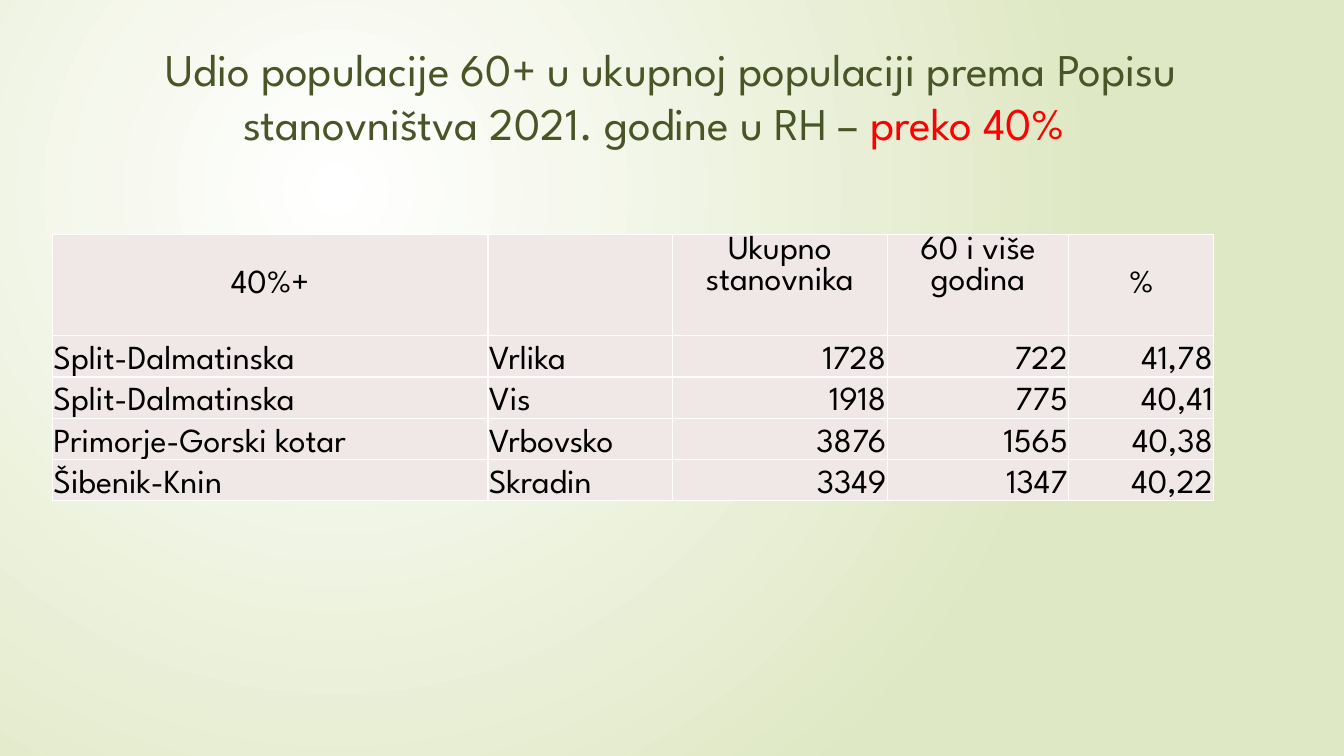
from lxml.etree import SubElement
from pptx import Presentation
from pptx.dml.color import RGBColor
from pptx.enum.text import MSO_ANCHOR, PP_ALIGN
from pptx.oxml.ns import qn
from pptx.util import Inches, Pt

FONT = "League Spartan"
HUES = {"white": "FFFFFF", "lime": "DFE8C4", "olive": "495526",
        "red": "FF0000", "black": "000000", "blush": "F0E8E7"}
LEFT = 0.52
COLS = [4.32, 1.83, 2.13, 1.8, 1.44]
HEAD_H, ROW_H = 1.0, 0.41
DATA = [
    ["40%+", "", "Ukupno stanovnika", "60 i više godina", "%"],
    ["Split-Dalmatinska", "Vrlika", "1728", "722", "41,78"],
    ["Split-Dalmatinska", "Vis", "1918", "775", "40,41"],
    ["Primorje-Gorski kotar", "Vrbovsko", "3876", "1565", "40,38"],
    ["Šibenik-Knin", "Skradin", "3349", "1347", "40,22"],
]


def color(name):
    return RGBColor.from_string(HUES[name])


def style(run, size, hue):
    run.font.name = FONT
    run.font.size = Pt(size)
    run.font.color.rgb = color(hue)


def paint_back(slide):
    """Fill the background with a radial gradient centred up and left."""
    fill = slide.background.fill
    fill.gradient()
    for stop, hue, pos in zip(fill.gradient_stops, ("white", "lime"), (0, 1)):
        stop.color.rgb = color(hue)
        stop.position = pos
    grad = slide.element.find(".//" + qn("a:gradFill"))
    grad.remove(grad.find(qn("a:lin")))
    ring = SubElement(grad, qn("a:path"), {"path": "circle"})
    SubElement(ring, qn("a:fillToRect"),
               {"l": "50000", "t": "50000", "r": "100000", "b": "100000"})


def add_title(slide, parts):
    box = slide.shapes.add_textbox(Inches(LEFT), Inches(0.34),
                                   Inches(12.28), Inches(1.4))
    frame = box.text_frame
    frame.word_wrap = True
    frame.margin_top = Inches(0.07)
    para = frame.paragraphs[0]
    para.alignment = PP_ALIGN.CENTER
    para.line_spacing = Pt(38.6)
    for text, hue in parts:
        run = para.add_run()
        run.text = text
        style(run, 32.4, hue)


def add_edges(cell):
    """Draw a thin white line on each side of the cell."""
    props = cell._tc.get_or_add_tcPr()
    for spot, side in enumerate(("a:lnL", "a:lnR", "a:lnT", "a:lnB")):
        line = props.makeelement(qn(side), {"w": str(Pt(1))})
        fill = SubElement(line, qn("a:solidFill"))
        SubElement(fill, qn("a:srgbClr"), {"val": HUES["white"]})
        props.insert(spot, line)


def fill_cell(cell, text, row, col):
    head = row == 0
    cell.fill.solid()
    cell.fill.fore_color.rgb = color("blush")
    add_edges(cell)
    cell.margin_left = cell.margin_right = cell.margin_top = Inches(0.01)
    # The two-line headings sit at the top of the tall row.
    cell.margin_bottom = Inches(0.37 if head and " " in text else 0)
    cell.vertical_anchor = MSO_ANCHOR.MIDDLE if head else MSO_ANCHOR.BOTTOM
    para = cell.text_frame.paragraphs[0]
    para.text = text
    if head:
        para.alignment = PP_ALIGN.CENTER
    else:
        para.alignment = PP_ALIGN.LEFT if col < 2 else PP_ALIGN.RIGHT
    for run in para.runs:
        style(run, 24, "black")


def add_grid(slide, data):
    high = HEAD_H + ROW_H * (len(data) - 1)
    table = slide.shapes.add_table(
        len(data), len(COLS), Inches(LEFT), Inches(2.33),
        Inches(sum(COLS)), Inches(high)).table
    table.first_row = table.horz_banding = False
    for col, wide in enumerate(COLS):
        table.columns[col].width = Inches(wide)
    for row, texts in enumerate(data):
        table.rows[row].height = Inches(ROW_H if row else HEAD_H)
        for col, text in enumerate(texts):
            fill_cell(table.cell(row, col), text, row, col)


def main():
    deck = Presentation()
    deck.slide_width, deck.slide_height = Inches(13.33), Inches(7.5)
    slide = deck.slides.add_slide(deck.slide_layouts[6])
    paint_back(slide)
    add_grid(slide, DATA)
    add_title(slide, [
        ("Udio populacije 60+ u ukupnoj populaciji prema Popisu "
         "stanovništva 2021. godine u RH – ", "olive"),
        ("preko 40%\t", "red"),
    ])
    deck.save("out.pptx")


if __name__ == "__main__":
    main()
